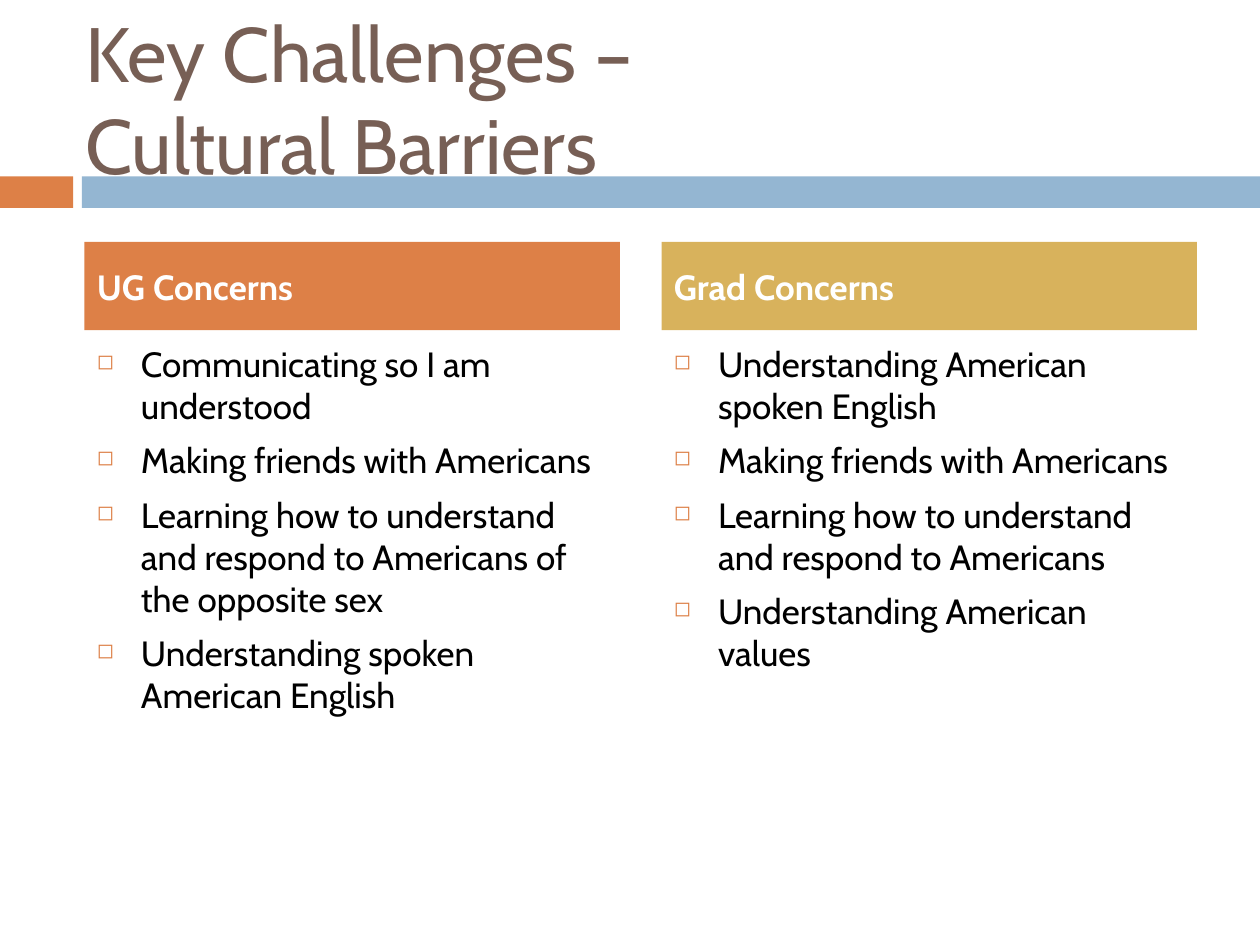
from lxml import etree
from pptx import Presentation
from pptx import util as u
from pptx.dml.color import RGBColor
from pptx.enum import shapes, text
from pptx.oxml import ns

ORANGE, BLUE, GOLD, BROWN = "DD8047", "94B6D2", "D8B25C", "775F55"
COLUMNS = [
    ("UG Concerns", ORANGE, [
        "Communicating so I am understood",
        "Making friends with Americans",
        "Learning how to understand and respond to Americans of the opposite sex",
        "Understanding spoken American English",
    ]),
    ("Grad Concerns", GOLD, [
        "Understanding American spoken English",
        "Making friends with Americans",
        "Learning how to understand and respond to Americans",
        "Understanding American values",
    ]),
]


def rgb(value):
    return RGBColor.from_string(value)


def add_bullet(para):
    """Give the paragraph a hanging indent and a small orange square."""
    props = para._p.get_or_add_pPr()
    props.set("marL", str(u.Inches(0.35)))
    props.set("indent", str(-u.Inches(0.35)))
    color = etree.SubElement(props, ns.qn("a:buClr"))
    etree.SubElement(color, ns.qn("a:srgbClr"), val=ORANGE)
    etree.SubElement(props, ns.qn("a:buSzPct"), val="60000")
    etree.SubElement(props, ns.qn("a:buChar"), char="◻")


class Page:
    def __init__(self, slide, font="Cabin"):
        self.slide = slide
        self.font = font

    def fill_text(self, box, lines, size, color, bold=False, anchor="MIDDLE", bullets=False):
        frame = box.text_frame
        frame.word_wrap = True
        frame.vertical_anchor = text.MSO_ANCHOR[anchor]
        style = {"name": self.font, "size": u.Pt(size), "bold": bold}
        for index, line in enumerate(lines):
            para = frame.add_paragraph() if index else frame.paragraphs[0]
            para.text = line
            para.alignment = text.PP_ALIGN.LEFT
            if index:
                para.space_before = u.Pt(7)
            if bullets:
                add_bullet(para)
            for span in para.runs:
                for key, value in style.items():
                    setattr(span.font, key, value)
                span.font.color.rgb = rgb(color)

    def bar(self, left, top, width, height, fill):
        box = self.slide.shapes.add_shape(
            shapes.MSO_SHAPE.RECTANGLE, *map(u.Inches, (left, top, width, height)))
        box.shadow.inherit = False
        box.fill.solid()
        box.fill.fore_color.rgb = rgb(fill)
        box.line.fill.background()
        return box

    def text_box(self, left, top, width, height, lines, **style):
        box = self.slide.shapes.add_textbox(*map(u.Inches, (left, top, width, height)))
        self.fill_text(box, lines, **style)

    def column(self, left, heading, fill, points):
        width = 4.25
        header = self.bar(left, 1.92, width, 0.7, fill)
        self.fill_text(header, [heading], size=20, color="FFFFFF", bold=True)
        self.text_box(left, 2.67, width, 3.92, points, size=20, color="000000",
                      anchor="TOP", bullets=True)


def main():
    deck = Presentation()
    deck.slide_width, deck.slide_height = u.Inches(10), u.Inches(7.5)
    page = Page(deck.slides.add_slide(deck.slide_layouts[6]))
    page.bar(0, 1.4, 0.58, 0.25, ORANGE)
    page.bar(0.65, 1.4, 9.35, 0.25, BLUE)
    page.text_box(0.58, 0.3, 8.92, 0.95, ["Key Challenges –\vCultural Barriers"],
                  size=44, color=BROWN)
    for index, column in enumerate(COLUMNS):
        page.column(0.67 + index * 4.58, *column)
    deck.save("out.pptx")


if __name__ == "__main__":
    main()
